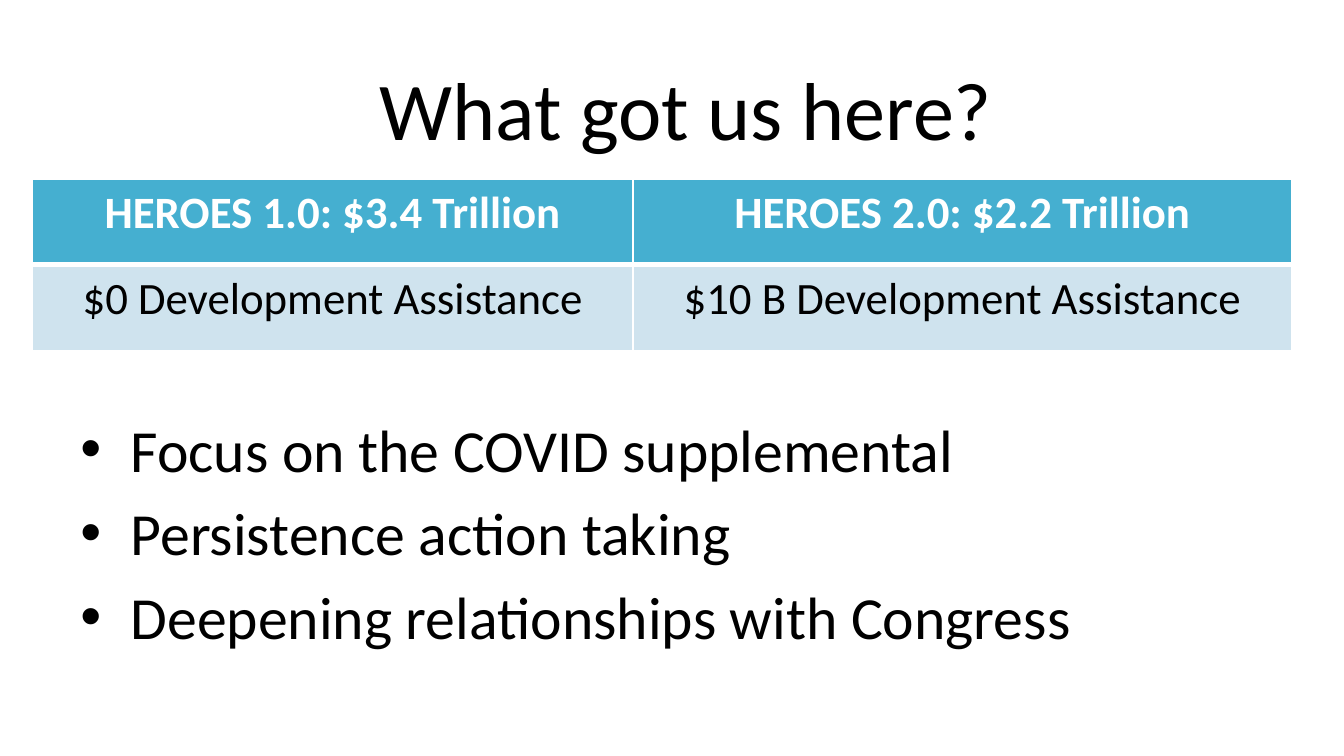
from lxml.etree import SubElement
from pptx import Presentation
from pptx.dml.color import RGBColor
from pptx.enum.text import MSO_ANCHOR as Anchor, PP_ALIGN as Align
from pptx.oxml.ns import qn
from pptx.util import Cm, Pt

BLACK, WHITE = "000000", "FFFFFF"
HEADER_FILL, BODY_FILL = "45AFD0", "CFE3EE"
FUNDING = [
    ["HEROES 1.0: $3.4 Trillion", "HEROES 2.0: $2.2 Trillion"],
    ["$0 Development Assistance", "$10 B Development Assistance"],
]
REASONS = [
    "Focus on the COVID supplemental",
    "Persistence action taking",
    "Deepening relationships with Congress",
]


def color(hex_value):
    return RGBColor.from_string(hex_value)


def write(paragraph, text, size, hex_value=BLACK, bold=False, align=Align.LEFT):
    paragraph.text = text
    paragraph.alignment = align
    font = paragraph.runs[0].font
    for name, value in {"name": "Calibri", "size": Pt(size), "bold": bold}.items():
        setattr(font, name, value)
    font.color.rgb = color(hex_value)


def add_frame(slide, box, anchor):
    frame = slide.shapes.add_textbox(*map(Cm, box)).text_frame
    for name, value in {"word_wrap": True, "vertical_anchor": anchor}.items():
        setattr(frame, name, value)
    return frame


def add_title(slide, box, text):
    frame = add_frame(slide, box, Anchor.MIDDLE)
    write(frame.paragraphs[0], text, 44, align=Align.CENTER)


def add_border(cell, side, width):
    edge = SubElement(cell._tc.get_or_add_tcPr(), qn(f"a:ln{side}"), w=str(Pt(width)))
    fill = SubElement(edge, qn("a:solidFill"))
    SubElement(fill, qn("a:srgbClr"), val=WHITE)


def add_funding(slide, box, column_widths, rows):
    table = slide.shapes.add_table(len(rows), len(column_widths), *map(Cm, box)).table
    for column, width in zip(table.columns, column_widths):
        column.width = Cm(width)
    for r, row in enumerate(rows):
        header = r == 0
        borders = {"L": 1, "R": 1, "T": 1 if header else 3, "B": 3 if header else 1}
        for c, text in enumerate(row):
            cell = table.cell(r, c)
            for side, width in borders.items():
                add_border(cell, side, width)
            cell.fill.solid()
            cell.fill.fore_color.rgb = color(HEADER_FILL if header else BODY_FILL)
            write(cell.text_frame.paragraphs[0], text, 24,
                  WHITE if header else BLACK, header, Align.CENTER)


def add_reasons(slide, box, reasons):
    frame = add_frame(slide, box, Anchor.TOP)
    for i, reason in enumerate(reasons):
        paragraph = frame.add_paragraph() if i else frame.paragraphs[0]
        properties = paragraph._p.get_or_add_pPr()
        properties.set("marL", str(Cm(0.95)))
        properties.set("indent", str(-Cm(0.95)))
        SubElement(properties, qn("a:buFont"), typeface="Arial")
        SubElement(properties, qn("a:buChar"), char="•")
        if i:
            paragraph.space_before = Pt(6.4)
        write(paragraph, reason, 32)


def main():
    deck = Presentation()
    deck.slide_width, deck.slide_height = Cm(25.4), Cm(14.29)
    slide = deck.slides.add_slide(deck.slide_layouts[6])
    add_title(slide, (4.78, 0.58, 16.38, 2.92), "What got us here?")
    add_reasons(slide, (1.27, 7.67, 22.86, 5.51), REASONS)
    add_funding(slide, (0.61, 3.38, 23.8, 3.25), (11.35, 12.45), FUNDING)
    deck.save("out.pptx")


if __name__ == "__main__":
    main()
